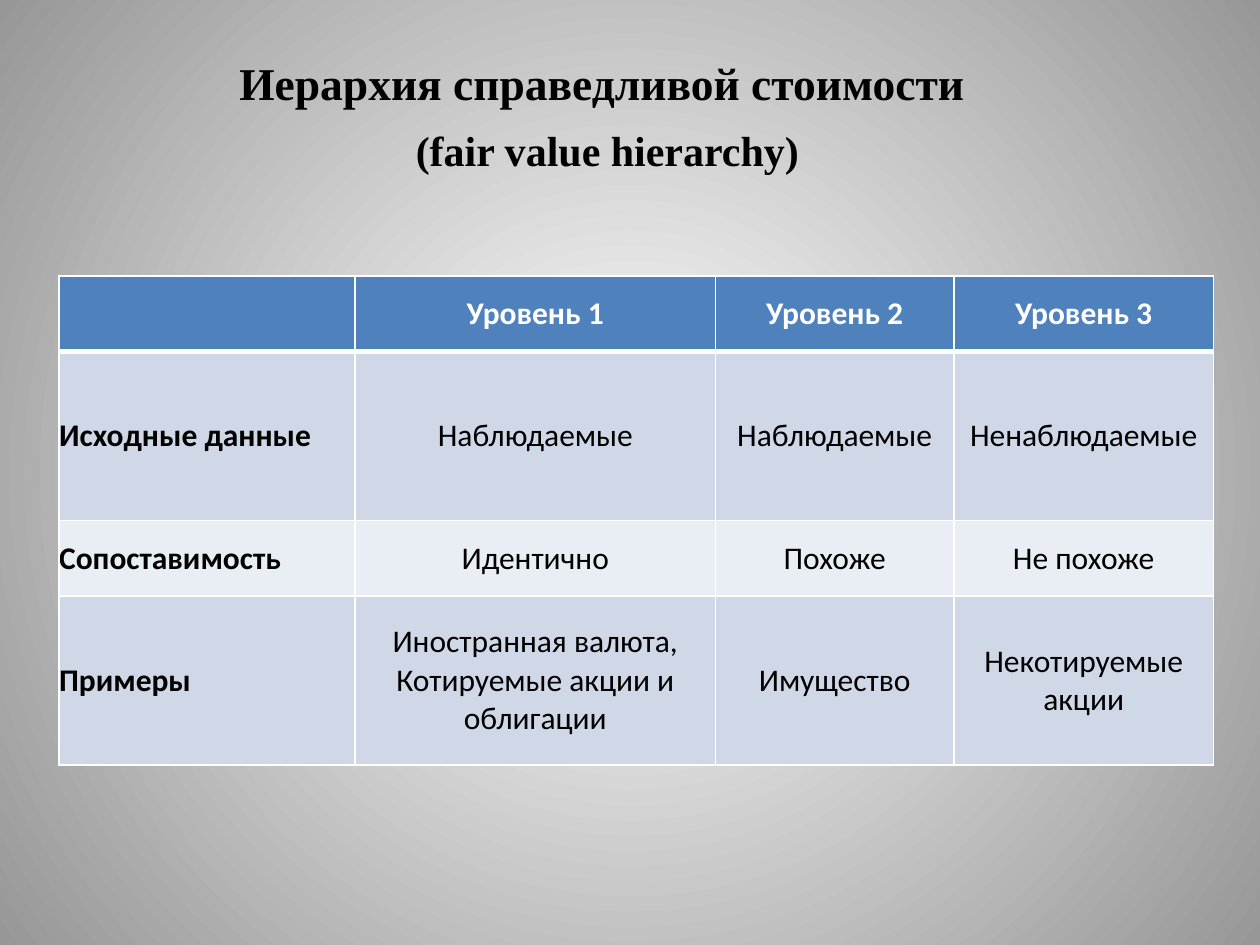
from dataclasses import dataclass

from pptx import Presentation
from pptx.dml.color import RGBColor
from pptx.enum.text import MSO_ANCHOR, MSO_AUTO_SIZE, PP_ALIGN
from pptx.oxml import parse_xml
from pptx.oxml.ns import nsdecls
from pptx.util import Pt


@dataclass(frozen=True)
class Theme:
    serif: str = "Times New Roman"
    sans: str = "Calibri"
    black: str = "000000"
    white: str = "FFFFFF"
    edge: str = "979797"
    head: str = "4F81BD"
    bands: tuple = ("D0D8E8", "E9EDF4")
    title: int = 26
    sub: int = 24
    cell: int = 18
    thin: int = 1
    thick: int = 3


THEME = Theme()
ROWS = [
    ["", "Уровень 1", "Уровень 2", "Уровень 3"],
    ["Исходные данные", "Наблюдаемые", "Наблюдаемые", "Ненаблюдаемые"],
    ["Сопоставимость", "Идентично", "Похоже", "Не похоже"],
    ["Примеры", "Иностранная валюта, Котируемые акции и облигации",
     "Имущество", "Некотируемые акции"],
]
WIDTHS = [169.2, 205.8, 136.4, 148.2]
LOW, HIGH = 43.2, 96.5
HEIGHTS = [LOW, HIGH, LOW, HIGH]


def apply(item, form):
    for name, value in form.items():
        setattr(item, name, value)


def style(para, face, size, color, bold, align):
    para.alignment = align
    apply(para.font, {"name": face, "size": Pt(size), "bold": bold})
    para.font.color.rgb = RGBColor.from_string(color)


def shade(slide):
    """Fill the background with a gradient that spreads from the centre."""
    slide.background.fill.solid()
    fill = slide.background.fill
    stops = "".join(
        f'<a:gs pos="{pos}"><a:srgbClr val="{color}"/></a:gs>'
        for pos, color in ((0, THEME.white), (100000, THEME.edge)))
    grad = parse_xml(
        f'<a:gradFill {nsdecls("a")} rotWithShape="1"><a:gsLst>{stops}</a:gsLst>'
        '<a:path path="circle"><a:fillToRect l="50000" t="50000" r="50000" '
        'b="50000"/></a:path></a:gradFill>')
    props = slide.element.find(".//" + "{%s}bgPr" % slide.element.nsmap["p"])
    props.replace(props[0], grad)


def heading(holder, box, text, size):
    sides = zip(("left", "top", "width", "height"), map(Pt, box))
    apply(holder, dict(sides))
    frame = holder.text_frame
    frame.text = text
    apply(frame, {"word_wrap": True, "vertical_anchor": MSO_ANCHOR.TOP,
                  "auto_size": MSO_AUTO_SIZE.SHAPE_TO_FIT_TEXT})
    para = frame.paragraphs[0]
    style(para, THEME.serif, size, THEME.black, True, PP_ALIGN.LEFT)
    apply(para, {"space_before": Pt(0), "line_spacing": 1.0})


def border(cell, base):
    props = cell._tc.get_or_add_tcPr()
    for side, width in zip("LRTB", (THEME.thin,) * 3 + (base,)):
        props.append(parse_xml(
            f'<a:ln{side} {nsdecls("a")} w="{Pt(width)}"><a:solidFill>'
            f'<a:srgbClr val="{THEME.white}"/></a:solidFill></a:ln{side}>'))


def paint(cell, text, row, col):
    top, side = row == 0, col == 0
    cell.text = text
    apply(cell, {"vertical_anchor": MSO_ANCHOR.MIDDLE, "margin_left": 0,
                 "margin_right": 0, "margin_top": 0, "margin_bottom": 0})
    style(cell.text_frame.paragraphs[0], THEME.sans, THEME.cell,
          THEME.white if top else THEME.black, top or side,
          PP_ALIGN.LEFT if side else PP_ALIGN.CENTER)
    border(cell, THEME.thick if top else THEME.thin)
    cell.fill.solid()
    color = THEME.head if top else THEME.bands[(row - 1) % 2]
    cell.fill.fore_color.rgb = RGBColor.from_string(color)


def levels(slide, box):
    """Place the table of the three levels."""
    grid = slide.shapes.add_table(len(ROWS), len(WIDTHS), *map(Pt, box)).table
    for col, width in zip(grid.columns, WIDTHS):
        col.width = Pt(width)
    for row, height in zip(grid.rows, HEIGHTS):
        row.height = Pt(height)
    for row, line in enumerate(ROWS):
        for col, text in enumerate(line):
            paint(grid.cell(row, col), text, row, col)


def main():
    deck = Presentation()
    apply(deck, {"slide_width": Pt(720), "slide_height": Pt(540)})
    slide = deck.slides.add_slide(deck.slide_layouts[0])
    shade(slide)
    title, sub = slide.placeholders
    heading(title, (129.6, 28, 506, 39), "Иерархия справедливой стоимости",
            THEME.title)
    heading(sub, (230.4, 67.7, 253.4, 36), "(fair value hierarchy)", THEME.sub)
    levels(slide, (33.8, 157.7, sum(WIDTHS), sum(HEIGHTS)))
    deck.save("out.pptx")


if __name__ == "__main__":
    main()
